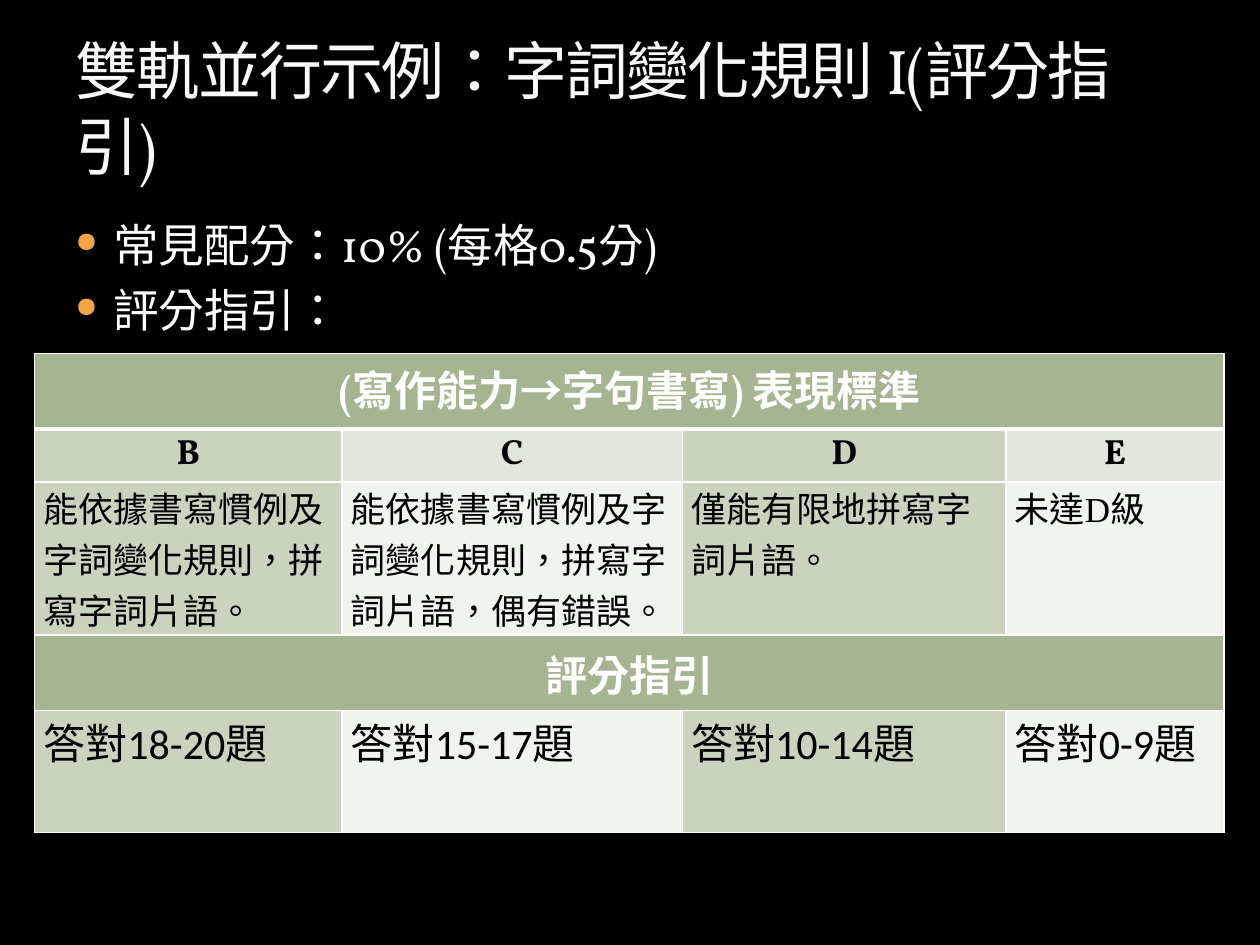
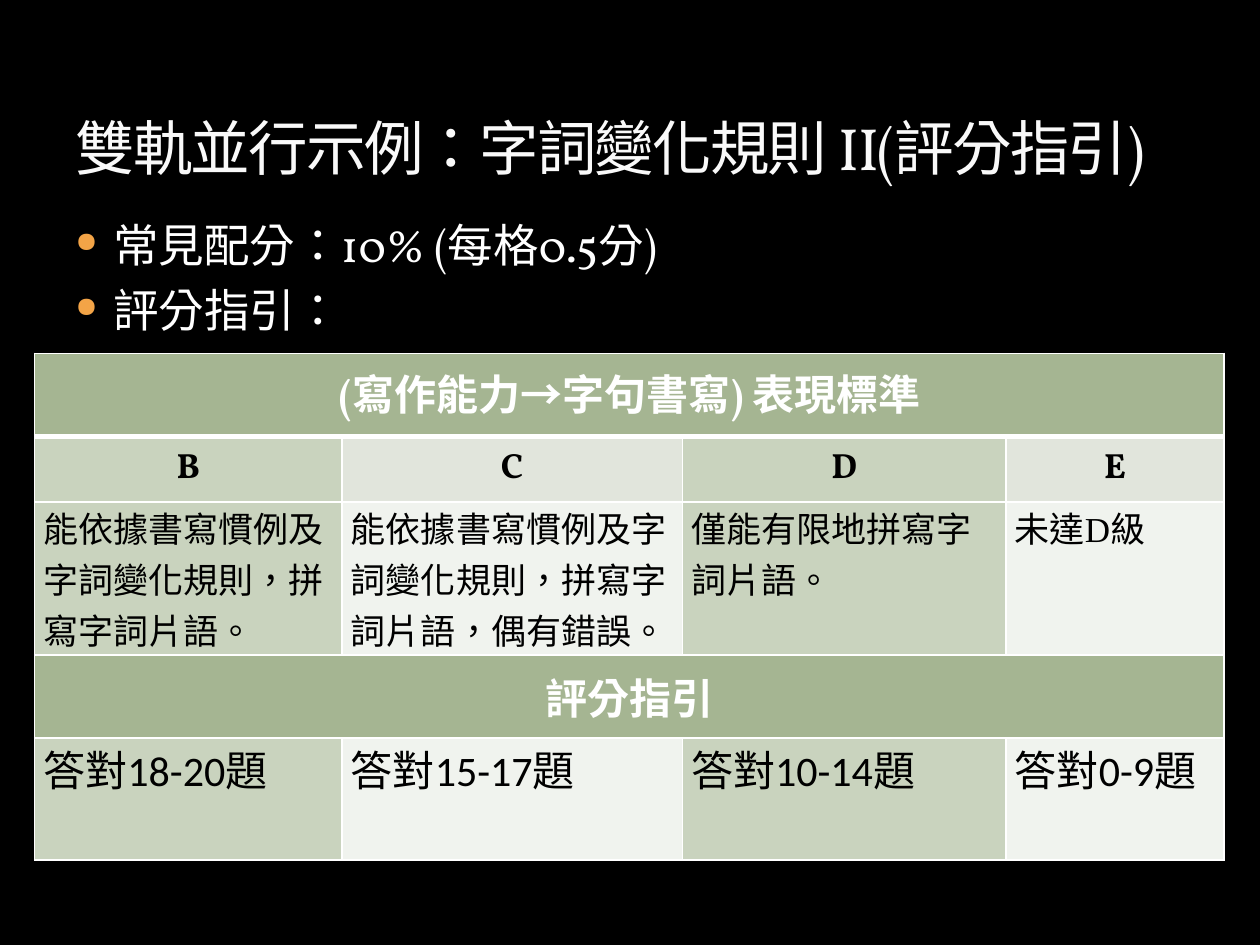
from lxml.etree import SubElement, fromstring
from pptx import Presentation
from pptx.dml.color import RGBColor
from pptx.enum.text import MSO_ANCHOR, PP_ALIGN
from pptx.oxml.ns import nsdecls, qn
from pptx.util import Inches, Pt

BLACK = RGBColor(0x00, 0x00, 0x00)
WHITE = RGBColor(0xFF, 0xFF, 0xFF)
TITLE_WHITE = RGBColor(0xF9, 0xF9, 0xF9)
TITLE_EDGE = RGBColor(0x3C, 0x44, 0x22)
BULLET_ORANGE = RGBColor(0xF3, 0xA4, 0x47)
BAND_GREEN = RGBColor(0xA5, 0xB5, 0x92)
SOFT_GREEN = RGBColor(0xC9, 0xD3, 0xBE)
GRADE_GREEN = RGBColor(0xE1, 0xE5, 0xDC)
PALE_GREEN = RGBColor(0xF0, 0xF3, 0xEE)

MAIN_FONT = "Vollkorn"
LANGUAGE = "zh-TW"
COLUMN_SHARES = (24.4, 27, 25.7, 17.3)

POINTS = ("常見配分：10% (每格0.5分)", "評分指引：")
STANDARD_HEADING = "(寫作能力→字句書寫) 表現標準"
GUIDE_HEADING = "評分指引"
GRADES = ("B", "C", "D", "E")
STANDARDS = (
    "能依據書寫慣例及字詞變化規則，拼寫字詞片語。",
    "能依據書寫慣例及字詞變化規則，拼寫字詞片語，偶有錯誤。",
    "僅能有限地拼寫字詞片語。",
    "未達D級",
)
SCORES = tuple(f"答對{correct}題" for correct in ("18-20", "15-17", "10-14", "0-9"))
SLIDES = (
    ("雙軌並行示例：字詞變化規則 I(評分指引)", 36, (8, 5.6, 16.2, 8, 12.9)),
    ("雙軌並行示例：字詞變化規則 II(評分指引)", 34, (8.8, 6.9, 16.2, 8.8, 12.9)),
)


class Deck:
    def __init__(self):
        self.presentation = Presentation()
        self.presentation.slide_width = Inches(10)
        self.presentation.slide_height = Inches(7.5)
        self.slide = None

    def across(self, percent):
        return round(self.presentation.slide_width * percent / 100)

    def down(self, percent):
        return round(self.presentation.slide_height * percent / 100)

    def area(self, left, top, width, height):
        return self.across(left), self.down(top), self.across(width), self.down(height)

    def new_slide(self):
        title_only = self.presentation.slide_layouts[5]
        self.slide = self.presentation.slides.add_slide(title_only)
        self.slide.background.fill.solid()
        self.slide.background.fill.fore_color.rgb = BLACK

    def style(self, paragraph, size, color, bold=False, font=MAIN_FONT):
        paragraph.font.name = font
        paragraph.font.size = Pt(size)
        paragraph.font.bold = bold
        paragraph.font.color.rgb = color
        letters = paragraph._p.pPr.find(qn("a:defRPr"))
        letters.set("lang", LANGUAGE)
        return letters

    def title(self, text, size):
        heading = self.slide.shapes.title
        heading.left, heading.top, heading.width, heading.height = self.area(5, 2.27, 90, 17.73)
        frame = heading.text_frame
        frame.text = text
        frame.word_wrap = True
        frame.vertical_anchor = MSO_ANCHOR.BOTTOM
        paragraph = frame.paragraphs[0]
        paragraph.alignment = PP_ALIGN.LEFT
        letters = self.style(paragraph, size, TITLE_WHITE)
        letters.set("spc", "-100")
        letters.insert(0, fromstring(
            f'<a:ln {nsdecls("a")} w="3175"><a:solidFill><a:srgbClr val="{TITLE_EDGE}">'
            '<a:alpha val="25000"/></a:srgbClr></a:solidFill></a:ln>'))

    def bullets(self, points):
        frame = self.slide.shapes.add_textbox(*self.area(5, 22.27, 90, 66.67)).text_frame
        frame.word_wrap = True
        for index, point in enumerate(points):
            paragraph = frame.add_paragraph() if index else frame.paragraphs[0]
            paragraph.text = point
            properties = paragraph._p.get_or_add_pPr()
            properties.set("marL", str(Inches(0.3)))
            properties.set("indent", str(-Inches(0.3)))
            color = SubElement(properties, qn("a:buClr"))
            SubElement(color, qn("a:srgbClr"), val=str(BULLET_ORANGE))
            SubElement(properties, qn("a:buSzPct"), val="62000")
            SubElement(properties, qn("a:buChar"), char="●")
            paragraph.space_before = Pt(6)
            self.style(paragraph, 26, WHITE)

    def borders(self, cell, top=1, bottom=1):
        properties = cell._tc.get_or_add_tcPr()
        sides = (("a:lnL", 1), ("a:lnR", 1), ("a:lnT", top), ("a:lnB", bottom))
        for index, (side, width) in enumerate(sides):
            properties.insert(index, fromstring(
                f'<{side} {nsdecls("a")} w="{Pt(width)}"><a:solidFill>'
                f'<a:srgbClr val="{WHITE}"/></a:solidFill></{side}>'))

    def cell(self, cell, text, fill, size, color=BLACK, bold=False, font=MAIN_FONT, centred=False):
        cell.text = text
        cell.fill.solid()
        cell.fill.fore_color.rgb = fill
        cell.margin_left = cell.margin_right = Inches(0.07)
        cell.margin_top = cell.margin_bottom = 0
        cell.vertical_anchor = MSO_ANCHOR.MIDDLE if centred else MSO_ANCHOR.TOP
        paragraph = cell.text_frame.paragraphs[0]
        paragraph.alignment = PP_ALIGN.CENTER if centred else PP_ALIGN.LEFT
        self.style(paragraph, size, color, bold, font)

    def band(self, grid, row, text):
        grid.cell(row, 0).merge(grid.cell(row, len(COLUMN_SHARES) - 1))
        self.cell(grid.cell(row, 0), text, BAND_GREEN, 24, WHITE, bold=True, centred=True)

    def rubric(self, row_shares):
        place = self.area(2.75, 37.4, sum(COLUMN_SHARES), sum(row_shares))
        grid = self.slide.shapes.add_table(len(row_shares), len(COLUMN_SHARES), *place).table
        for column, share in zip(grid.columns, COLUMN_SHARES):
            column.width = self.across(share)
        for row, share in zip(grid.rows, row_shares):
            row.height = self.down(share)

        self.band(grid, 0, STANDARD_HEADING)
        self.band(grid, 3, GUIDE_HEADING)
        for column, (grade, standard, score) in enumerate(zip(GRADES, STANDARDS, SCORES)):
            grade_fill, fill = (GRADE_GREEN, PALE_GREEN) if column % 2 else (SOFT_GREEN, SOFT_GREEN)
            standard_font = "Times New Roman" if grade == "E" else MAIN_FONT
            self.cell(grid.cell(1, column), grade, grade_fill, 20, bold=True, centred=True)
            self.cell(grid.cell(2, column), standard, fill, 20, font=standard_font)
            self.cell(grid.cell(4, column), score, fill, 24, font="Calibri")

        for row in range(len(row_shares)):
            for column in range(len(COLUMN_SHARES)):
                self.borders(grid.cell(row, column),
                             top=3 if row == 1 else 1, bottom=3 if row == 0 else 1)


def main():
    deck = Deck()
    for title, title_size, row_shares in SLIDES:
        deck.new_slide()
        deck.title(title, title_size)
        deck.bullets(POINTS)
        deck.rubric(row_shares)
    deck.presentation.save("out.pptx")


if __name__ == "__main__":
    main()
